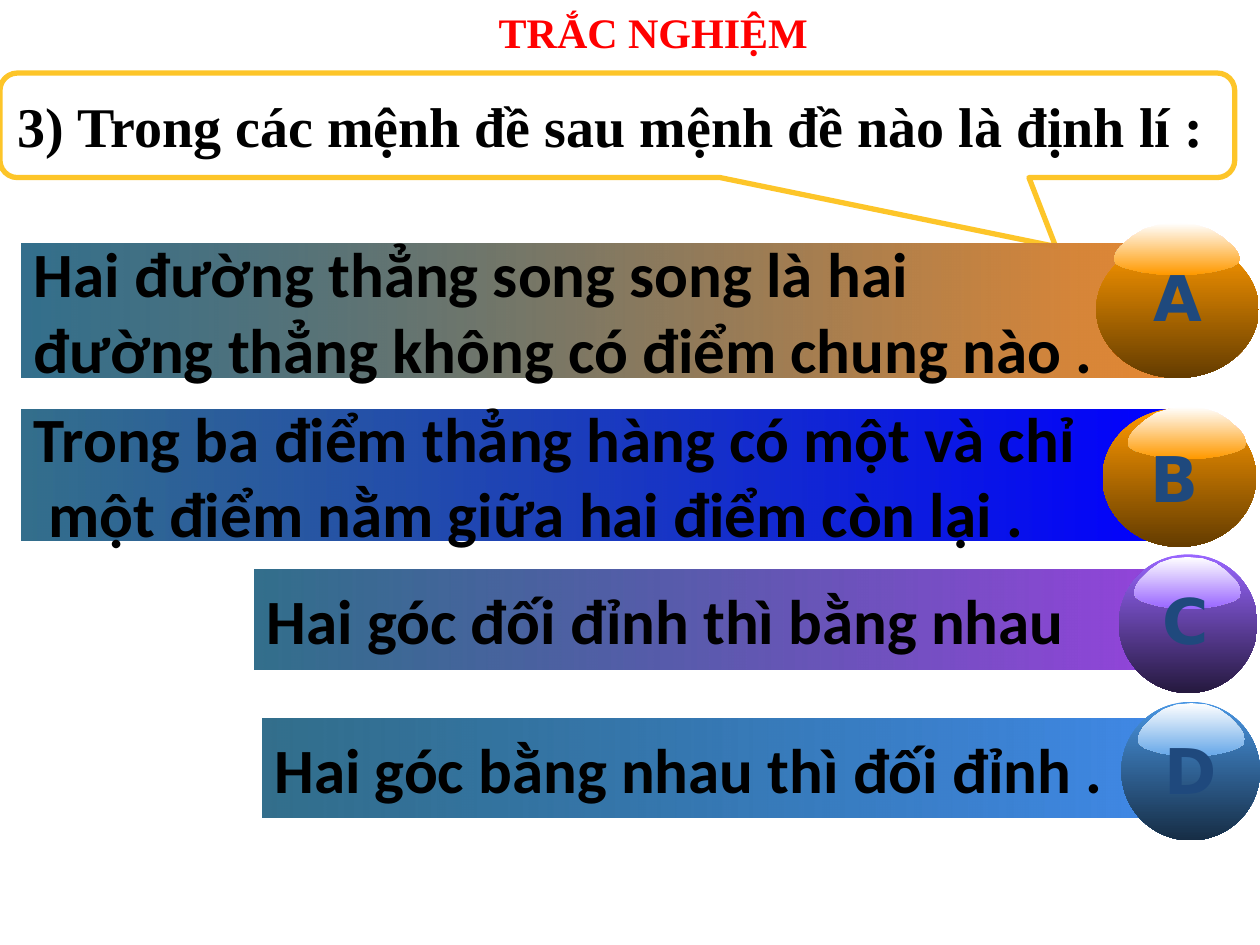
from lxml import etree
from pptx import Presentation
from pptx.dml.color import RGBColor
from pptx.enum import shapes, text
from pptx.oxml.ns import qn
from pptx.util import Inches, Pt

COLORS = {
    "white": "FFFFFF", "black": "000000", "red": "FF0000", "gold": "FDC529",
    "navy": "1F497D", "teal": "004B70", "orange": "FF9900", "brown": "643C00",
    "rust": "E98931", "blue": "0000FF", "violet": "9942E0", "purple": "9966FF",
    "plum": "25193E", "azure": "418AEB", "sky": "4996E3", "ink": "162D45",
    "pale": "66A7E8",
}
HALF_DOME = [
    (0, 0), (0.28, 0.03), (0.52, 0.12), (0.72, 0.27), (0.9, 0.46), (0.96, 0.56),
    (1, 0.68), (0.97, 0.78), (0.87, 0.85), (0.73, 0.9), (0.55, 0.95), (0.24, 1),
]
DOME = HALF_DOME + [(-x, y) for x, y in HALF_DOME[:0:-1]]
ORANGE_BALL = ("orange", "brown", "orange")
ANSWERS = [
    dict(letter="D", lines=["Hai góc bằng nhau thì đối đỉnh ."], end="azure",
         ball_colors=("sky", "ink", "pale"), bar=(2.08, 5.7, 7.42, 0.79),
         ball=(8.9, 5.57, 1.1, 1.1), gloss=(9.03, 5.58, 0.85, 0.42),
         label=(9.14, 5.76, 0.62, 0.7)),
    dict(letter="A", lines=["Hai đường thẳng song song là hai",
                            "đường thẳng không có điểm chung nào ."], end="rust",
         ball_colors=ORANGE_BALL, bar=(0.17, 1.93, 9.18, 1.07),
         ball=(8.7, 1.91, 1.29, 1.09), gloss=(8.84, 1.77, 1, 0.41),
         label=(9, 2, 0.7, 0.7)),
    dict(letter="C", lines=["Hai góc đối đỉnh thì bằng nhau"], end="violet",
         ball_colors=("purple", "plum", "purple"), bar=(2.02, 4.52, 7.51, 0.79),
         ball=(8.88, 4.4, 1.1, 1.1), gloss=(9, 4.42, 0.85, 0.41),
         label=(9.13, 4.57, 0.56, 0.7)),
    dict(letter="B", lines=["Trong ba điểm thẳng hàng có một và chỉ",
                            " một điểm nằm giữa hai điểm còn lại ."], end="blue",
         ball_colors=ORANGE_BALL, bar=(0.17, 3.25, 9.16, 1.04),
         ball=(8.75, 3.24, 1.22, 1.1), gloss=(8.95, 3.23, 0.94, 0.41),
         label=(9, 3.44, 0.65, 0.7)),
]


def rgb(name):
    """Return the named colour."""
    return RGBColor.from_string(COLORS[name])


def set_alpha(sp, percent):
    """Make the first colour of a shape translucent."""
    color = next(sp._element.spPr.iter(qn("a:srgbClr")))
    etree.SubElement(color, qn("a:alpha"), val=str(percent * 1000))


def write(sp, lines, size, font, color="black", align=text.PP_ALIGN.LEFT,
          anchor=text.MSO_ANCHOR.MIDDLE, wrap=False, grow=False):
    """Fill a shape with bold paragraphs."""
    tf = sp.text_frame
    tf.word_wrap = wrap
    tf.vertical_anchor = anchor
    if grow:
        tf.auto_size = text.MSO_AUTO_SIZE.SHAPE_TO_FIT_TEXT
    for i, line in enumerate(lines):
        p = tf.paragraphs[0] if i == 0 else tf.add_paragraph()
        p.alignment = align
        r = p.add_run()
        r.text = line
        r.font.size, r.font.name, r.font.bold = Pt(size), font, True
        r.font.color.rgb = rgb(color)


class Quiz:
    """Quiz slide builder holding its fonts and the current slide."""

    title_font, bar_font, label_font = "Times New Roman", "Calibri", "DejaVu Sans"

    def __init__(self, slide):
        """Keep the slide to draw on."""
        self.s = slide

    def gradient(self, sp, start, end, angle):
        """Give a shape a two-colour gradient without outline or shadow."""
        sp.shadow.inherit = False
        sp.line.fill.background()
        sp.fill.gradient()
        sp.fill.gradient_angle = angle
        for stop, color in zip(sp.fill.gradient_stops, (start, end)):
            stop.color.rgb = rgb(color)

    def shape(self, kind, box):
        """Add a preset shape."""
        return self.s.shapes.add_shape(kind, *map(Inches, box))

    def textbox(self, box, line, size, font, color):
        """Add a centred text box."""
        sp = self.s.shapes.add_textbox(*map(Inches, box))
        write(sp, [line], size, font, color, align=text.PP_ALIGN.CENTER,
              anchor=text.MSO_ANCHOR.TOP, wrap=len(line) > 1, grow=True)

    def question(self, box, line):
        """Add the speech bubble with the question."""
        sp = self.shape(shapes.MSO_SHAPE.ROUNDED_RECTANGULAR_CALLOUT, box)
        for i, value in enumerate((0.355, 1.159, 0.167)):
            sp.adjustments[i] = value
        sp.shadow.inherit = False
        sp.fill.solid()
        sp.fill.fore_color.rgb = rgb("white")
        set_alpha(sp, 78)
        sp.line.color.rgb, sp.line.width = rgb("gold"), Pt(3)
        write(sp, [line], 32, self.title_font, wrap=True)

    def gloss(self, box, color):
        """Add the highlight on top of a ball."""
        left, top, width, height = box
        points = [(Inches(left + width * (1 + x) / 2), Inches(top + height * y))
                  for x, y in DOME]
        outline = self.s.shapes.build_freeform(*points[0])
        outline.add_line_segments(points[1:], close=True)
        self.gradient(outline.convert_to_shape(), "white", color, 270)

    def answer(self, letter, lines, end, ball_colors, bar, ball, gloss, label):
        """Add an answer bar with its lettered ball."""
        sp = self.shape(shapes.MSO_SHAPE.RECTANGLE, bar)
        self.gradient(sp, "teal", end, 0)
        set_alpha(sp, 80)
        write(sp, lines, 36, self.bar_font)
        light, dark, shine = ball_colors
        self.gradient(self.shape(shapes.MSO_SHAPE.OVAL, ball), light, dark, 270)
        self.gloss(gloss, shine)
        self.textbox(label, letter, 36, self.label_font, "navy")


def main():
    """Build and save the slide."""
    prs = Presentation()
    prs.slide_width, prs.slide_height = Inches(10), Inches(7.5)
    quiz = Quiz(prs.slides.add_slide(prs.slide_layouts[6]))
    quiz.question((0, 0.58, 9.8, 0.83),
                  "3) Trong các mệnh đề sau mệnh đề nào là định lí :")
    for answer in ANSWERS:
        quiz.answer(**answer)
    quiz.textbox((2.85, 0, 4.67, 0.51), "TRẮC NGHIỆM", 24, quiz.title_font, "red")
    prs.save("out.pptx")


if __name__ == "__main__":
    main()
